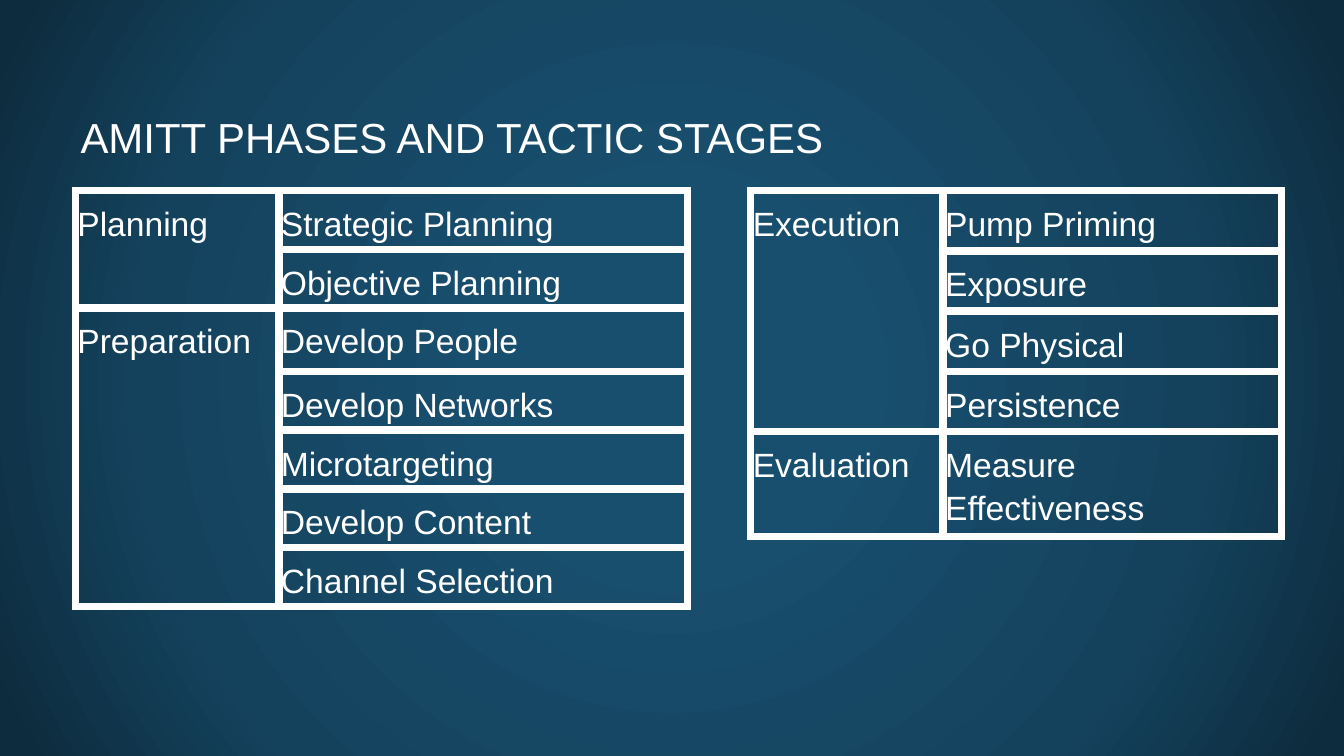
from lxml.etree import SubElement
from pptx import Presentation
from pptx.dml.color import RGBColor
from pptx.enum.text import MSO_ANCHOR
from pptx.oxml.ns import qn
from pptx.util import Cm, Pt

WHITE = RGBColor(0xFF, 0xFF, 0xFF)
TEAL = RGBColor(0x18, 0x4E, 0x6E)
DEEP = RGBColor(0x14, 0x42, 0x5D)
NIGHT = RGBColor(0x0D, 0x2C, 0x3E)
GLOW = [(0, TEAL), (23, TEAL), (69, DEEP), (97, NIGHT), (100, NIGHT)]

PLANNING = [
    ("Planning", ["Strategic Planning", "Objective Planning"]),
    ("Preparation", ["Develop People", "Develop Networks", "Microtargeting",
                     "Develop Content", "Channel Selection"]),
]
EXECUTION = [
    ("Execution", ["Pump Priming", "Exposure", "Go Physical", "Persistence"]),
    ("Evaluation", ["Measure Effectiveness"]),
]


class Deck:
    font = "Arial"
    color = WHITE
    border = Pt(6)

    def __init__(self, width, height):
        self.prs = Presentation()
        self.prs.slide_width = Cm(width)
        self.prs.slide_height = Cm(height)
        self.s = self.prs.slides.add_slide(self.prs.slide_layouts[6])

    def background(self, stops):
        self.s.background.fill.gradient()
        grad = self.s.element.find(".//" + qn("a:gradFill"))
        for child in list(grad):
            grad.remove(child)
        gs_list = SubElement(grad, qn("a:gsLst"))
        for pos, color in stops:
            gs = SubElement(gs_list, qn("a:gs"), pos=str(pos * 1000))
            SubElement(gs, qn("a:srgbClr"), val=str(color))
        circle = SubElement(grad, qn("a:path"), {"path": "circle"})
        SubElement(circle, qn("a:fillToRect"),
                   dict.fromkeys("ltrb", "50000"))

    def text_run(self, tf, text, size):
        p = tf.paragraphs[0]
        r = p.add_run()
        r.text = text
        r.font.name = self.font
        r.font.size = Pt(size)
        r.font.color.rgb = self.color
        return p

    def title(self, text, left, top, width, height):
        tf = self.s.shapes.add_textbox(
            Cm(left), Cm(top), Cm(width), Cm(height)).text_frame
        tf.word_wrap = True
        tf.vertical_anchor = MSO_ANCHOR.MIDDLE
        tf.margin_left = tf.margin_right = Cm(0.13)
        tf.margin_top = tf.margin_bottom = Cm(0.13)
        self.text_run(tf, text, 30)

    def style_cell(self, cell):
        cell.margin_left = cell.margin_right = cell.margin_bottom = Cm(0.05)
        cell.margin_top = Cm(0.25)
        tcPr = cell._tc.get_or_add_tcPr()
        for side in "LRTB":
            ln = SubElement(tcPr, qn(f"a:ln{side}"), w=str(int(self.border)))
            fill = SubElement(ln, qn("a:solidFill"))
            SubElement(fill, qn("a:srgbClr"), val=str(self.color))
        cell.fill.background()

    def cell_text(self, cell, text):
        self.text_run(cell.text_frame, text, 24).line_spacing = 1.15

    def phase_table(self, phases, left, top, cols, rows):
        table = self.s.shapes.add_table(
            len(rows), len(cols), Cm(left), Cm(top),
            Cm(sum(cols)), Cm(sum(rows))).table
        table.first_row = table.horz_banding = False
        for col, width in zip(table.columns, cols):
            col.width = Cm(width)
        for row, height in zip(table.rows, rows):
            row.height = Cm(height)
        for cell in table.iter_cells():
            self.style_cell(cell)
        first = 0
        for phase, stages in phases:
            last = first + len(stages) - 1
            if last > first:
                table.cell(first, 0).merge(table.cell(last, 0))
            self.cell_text(table.cell(first, 0), phase)
            for i, stage in enumerate(stages, first):
                self.cell_text(table.cell(i, 1), stage)
            first = last + 1


def main():
    deck = Deck(33.87, 19.05)
    deck.background(GLOW)
    deck.title("AMITT PHASES AND TACTIC STAGES", 1.9, 1.7, 30.12, 3.5)
    deck.phase_table(PLANNING, 1.9, 4.8, [5.13, 10.29],
                     [1.48] * 2 + [1.6] + [1.48] * 4)
    deck.phase_table(EXECUTION, 18.92, 4.8, [4.85, 8.53],
                     [1.52] * 4 + [2.64])
    deck.prs.save("out.pptx")


if __name__ == "__main__":
    main()
